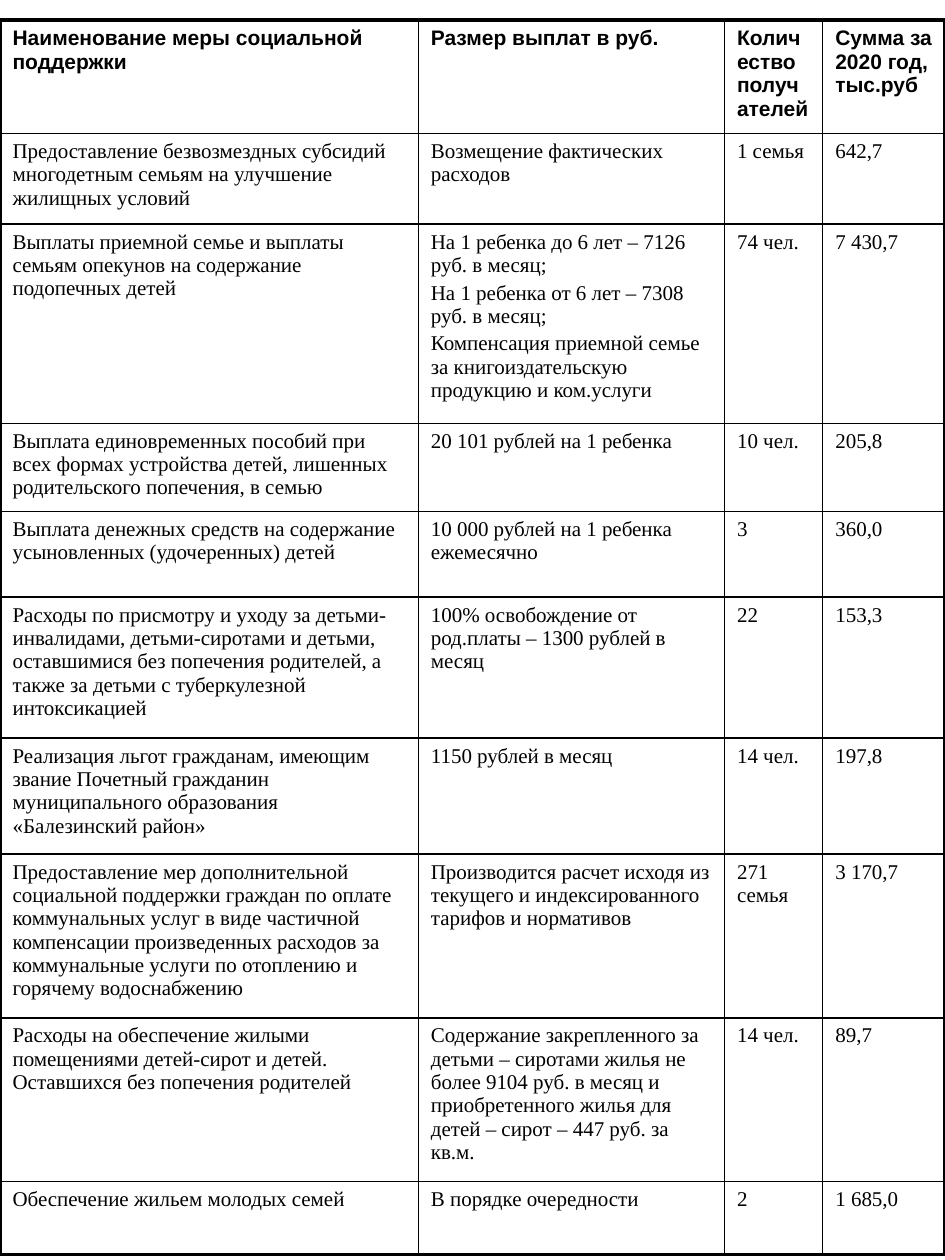
from lxml import etree
from pptx import Presentation
from pptx.dml.color import RGBColor
from pptx.enum.text import MSO_ANCHOR, PP_ALIGN
from pptx.oxml.ns import qn
from pptx.util import Inches, Pt

TOP = MSO_ANCHOR.TOP
LEFT = PP_ALIGN.LEFT
BLACK = RGBColor(0, 0, 0)
WHITE = RGBColor(255, 255, 255)
WIDE, HIGH = 7.5, 10
COLS = [3.32, 2.43, 0.78, 0.97]
ROWS = [0.9, 0.72, 1.58, 0.7, 0.68, 1.12, 0.92, 1.3, 1.3, 0.58]

HEAD = ["Наименование меры социальной поддержки", "Размер выплат в руб.",
        "Количество получателей", "Сумма за 2020 год, тыс.руб"]
BODY = [
    ["Предоставление безвозмездных субсидий многодетным семьям "
     "на улучшение жилищных условий",
     "Возмещение фактических расходов", "1 семья", "642,7"],
    ["Выплаты приемной семье и выплаты семьям опекунов "
     "на содержание подопечных детей",
     "На 1 ребенка до 6 лет – 7126 руб. в месяц;\n"
     "На 1 ребенка от 6 лет – 7308 руб. в месяц;\n"
     "Компенсация приемной семье за книгоиздательскую продукцию и ком.услуги",
     "74 чел.", "7 430,7"],
    ["Выплата единовременных пособий при всех формах устройства детей, "
     "лишенных родительского попечения, в семью",
     "20 101 рублей на 1 ребенка", "10 чел.", "205,8"],
    ["Выплата денежных средств на содержание усыновленных (удочеренных) детей",
     "10 000 рублей на 1 ребенка ежемесячно", "3", "360,0"],
    ["Расходы по присмотру и уходу за детьми-инвалидами, детьми-сиротами "
     "и детьми, оставшимися без попечения родителей, а также за детьми "
     "с туберкулезной интоксикацией",
     "100% освобождение от род.платы – 1300 рублей в месяц", "22", "153,3"],
    ["Реализация льгот гражданам, имеющим звание Почетный гражданин "
     "муниципального образования «Балезинский район»",
     "1150 рублей в месяц", "14 чел.", "197,8"],
    ["Предоставление мер дополнительной социальной поддержки граждан "
     "по оплате коммунальных услуг в виде частичной компенсации "
     "произведенных расходов за коммунальные услуги по отоплению "
     "и горячему водоснабжению",
     "Производится расчет исходя из текущего и индексированного "
     "тарифов и нормативов", "271 семья", "3 170,7"],
    ["Расходы на обеспечение жилыми помещениями детей-сирот и детей. "
     "Оставшихся без попечения родителей",
     "Содержание закрепленного за детьми – сиротами жилья не более "
     "9104 руб. в месяц и приобретенного жилья для детей – сирот – "
     "447 руб. за кв.м.", "14 чел.", "89,7"],
    ["Обеспечение жильем молодых семей", "В порядке очередности",
     "2", "1 685,0"],
]


class Page:
    size = Pt(12)
    gap = Pt(2.4)
    thin, thick = Pt(1), Pt(2.25)
    head_font, body_font = "Arial", "Times New Roman"

    def __init__(self, slide):
        self.slide = slide

    def table(self, data, cols, rows, left, top):
        frame = self.slide.shapes.add_table(
            len(rows), len(cols), Inches(left), Inches(top),
            Inches(sum(cols)), Inches(sum(rows)))
        grid = frame.table
        grid.horz_banding = False
        for col, width in zip(grid.columns, cols):
            col.width = Inches(width)
        for row, height in zip(grid.rows, rows):
            row.height = Inches(height)
        for r, line in enumerate(data):
            for c, text in enumerate(line):
                cell = grid.cell(r, c)
                self.text(cell, text, r == 0)
                outer = {"L": c == 0, "R": c == len(cols) - 1,
                         "T": r == 0, "B": r == len(rows) - 1}
                for side, edge in outer.items():
                    self.border(cell, side, self.thick if edge else self.thin)
                cell.fill.solid()
                cell.fill.fore_color.rgb = WHITE

    def text(self, cell, text, head):
        cell.vertical_anchor = TOP
        cell.margin_left = cell.margin_right = Inches(0.1)
        cell.margin_top = cell.margin_bottom = Inches(0.05)
        frame = cell.text_frame
        for i, part in enumerate(text.split("\n")):
            para = frame.add_paragraph() if i else frame.paragraphs[0]
            para.alignment = LEFT
            para.space_before = self.gap
            run = para.add_run()
            run.text = part
            font = run.font
            font.name = self.head_font if head else self.body_font
            font.size = self.size
            font.bold = head
            font.color.rgb = BLACK

    def border(self, cell, side, width):
        """Draw one side; sides must come in the order L, R, T, B."""
        props = cell._tc.get_or_add_tcPr()
        line = etree.SubElement(props, qn(f"a:ln{side}"), w=str(width))
        fill = etree.SubElement(line, qn("a:solidFill"))
        etree.SubElement(fill, qn("a:srgbClr"), val=str(BLACK))


def main():
    deck = Presentation()
    deck.slide_width, deck.slide_height = Inches(WIDE), Inches(HIGH)
    page = Page(deck.slides.add_slide(deck.slide_layouts[6]))
    page.table([HEAD] + BODY, COLS, ROWS, 0, 0.016 * HIGH)
    deck.save("out.pptx")


if __name__ == "__main__":
    main()
